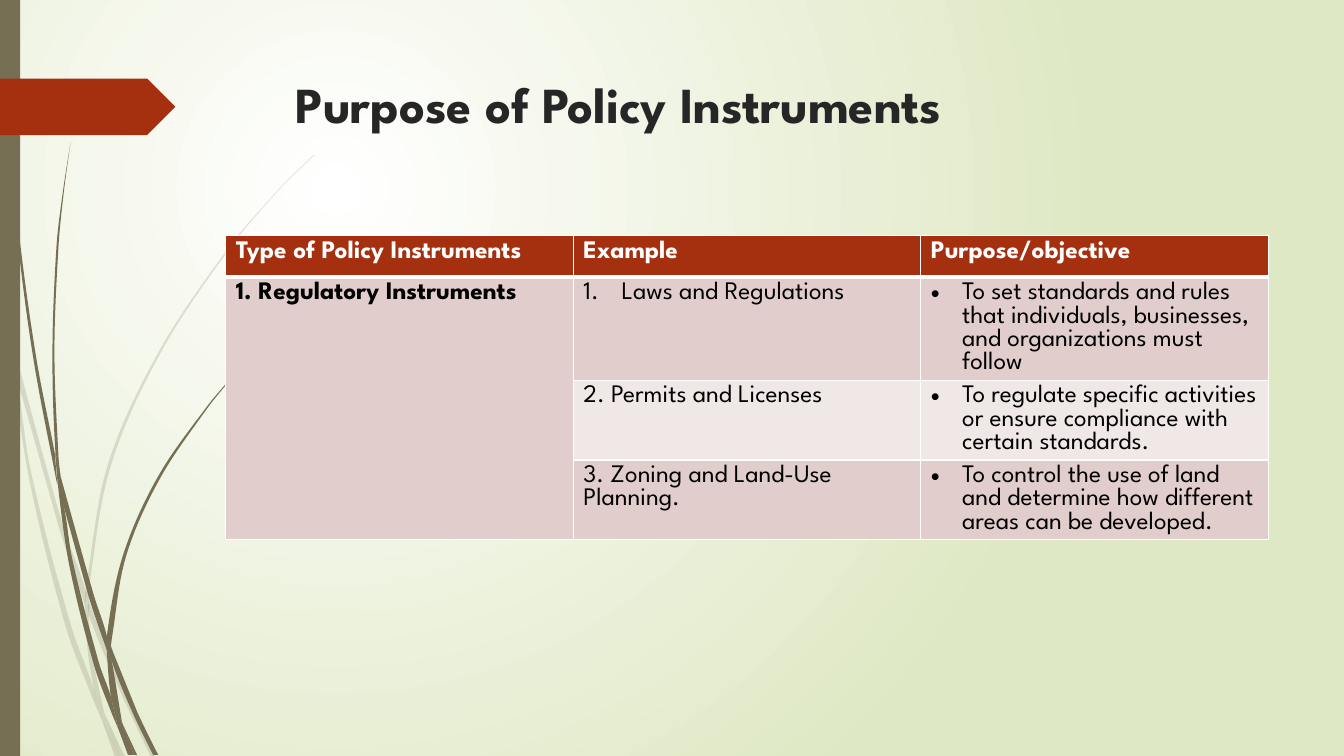
from dataclasses import dataclass
from math import hypot

from pptx import Presentation, util as u
from pptx.dml.color import RGBColor
from pptx.enum import shapes, text
from pptx.oxml import parse_xml
from pptx.oxml.ns import nsdecls, qn
from pptx.oxml.xmlchemy import OxmlElement


@dataclass(frozen=True)
class Theme:
    font: str = "League Spartan"
    bullet_font: str = "Arial"
    title_size: int = 36
    table_size: int = 18
    title: str = "262626"
    accent: str = "A53010"
    stem: str = "766F54"
    white: str = "FFFFFF"
    black: str = "000000"
    backdrop: str = "DFE8C4"
    band_dark: str = "E1CDCC"
    band_light: str = "F0E8E7"
    columns: float = 13.33
    rows: float = 7.5


PALE_BLADES = [
    [(.11, 3.5), (.09, 3.22), (0, 2.82), (0, 2.99), (.1, 3.44)],
    [(.58, 5.22), (.84, 5.99), (.85, 5.86), (.62, 5.2), (.14, 3.45), (.17, 3.76)],
    [(.92, 6.07), (.88, 5.96), (.88, 6.1), (1.23, 6.94), (1.5, 7.51), (1.55, 7.51), (1.27, 6.92)],
    [(1.19, 7.51), (1.24, 7.51), (1.05, 7.11)],
    [(.93, 6.83), (.7, 6.19), (.31, 4.69), (.17, 3.76), (.11, 3.5), (.28, 4.7), (.65, 6.21),
     (.92, 6.93), (1.01, 7.14), (.99, 7.07)],
    [(.84, 5.99), (.87, 6.46), (.93, 6.83), (.96, 6.92), (1.05, 7.11), (1.03, 7.06), (.91, 6.46),
     (.88, 6.1), (.88, 6.08)],
    [(.88, 5.84), (1.1, 4.62), (1.6, 3.49), (2.29, 2.45), (2.68, 1.98), (2.9, 1.75), (3.12, 1.54),
     (3.12, 1.53), (2.89, 1.75), (2.68, 1.97), (2.28, 2.44), (1.58, 3.48), (1.07, 4.61),
     (.85, 5.84), (.85, 5.86), (.88, 5.96)],
    [(1.01, 7.14), (1.14, 7.51), (1.19, 7.51)],
    [(.88, 6.08), (.88, 6.1), (.88, 5.96), (.85, 5.86), (.84, 5.99)],
    [(.96, 6.92), (.93, 6.83), (.99, 7.07), (1.01, 7.14), (1.19, 7.51), (1.05, 7.11)],
]
DARK_BLADES = [
    [(.07, 1.1), (.17, 2.33), (.33, 3.55), (.56, 4.77), (.57, 4.81), (.55, 4.57), (.55, 4.53),
     (.36, 3.55), (.19, 2.32), (.08, 1.09), (.05, .48), (.04, 0), (.03, 0), (.04, .48)],
    [(.88, 5.92), (1.06, 6.45), (1.06, 6.31), (.93, 5.9), (.6, 4.72), (.64, 5.05)],
    [(1.13, 6.49), (1.1, 6.41), (1.11, 6.56), (1.32, 7.08), (1.52, 7.49), (1.57, 7.49), (1.36, 7.06)],
    [(1.1, 6.91), (.98, 6.57), (.72, 5.56), (.64, 5.05), (.57, 4.77), (.68, 5.57), (.93, 6.59),
     (1.11, 7.08), (1.17, 7.22), (1.16, 7.17)],
    [(.6, 4.72), (.58, 4.53), (.54, 3.49), (.58, 2.45), (.63, 1.93), (.7, 1.41), (.62, 1.93),
     (.56, 2.45), (.52, 3.49), (.55, 4.49)],
    [(1.33, 7.49), (1.36, 7.49), (1.22, 7.19)],
    [(.57, 4.77), (.64, 5.05), (.6, 4.72), (.55, 4.49), (.55, 4.53)],
    [(1.11, 6.33), (1.25, 5.52), (1.58, 4.76), (2.05, 4.06), (2.31, 3.74), (2.45, 3.59),
     (2.61, 3.44), (2.6, 3.44), (2.45, 3.58), (2.31, 3.73), (2.04, 4.05), (1.56, 4.74),
     (1.22, 5.51), (1.06, 6.31), (1.1, 6.41)],
    [(1.17, 7.22), (1.27, 7.49), (1.31, 7.49)],
    [(1.06, 6.45), (1.1, 6.91), (1.16, 7.06), (1.22, 7.19), (1.21, 7.16), (1.11, 6.56), (1.09, 6.51)],
    [(1.06, 6.45), (1.09, 6.51), (1.11, 6.56), (1.1, 6.41), (1.06, 6.31)],
    [(1.16, 7.06), (1.1, 6.91), (1.16, 7.17), (1.17, 7.22), (1.3, 7.49), (1.33, 7.49), (1.22, 7.19)],
]
HEADERS = ["Type of Policy Instruments", "Example", "Purpose/objective"]
CATEGORY = "1. Regulatory Instruments"
INSTRUMENTS = [
    ("Laws and Regulations",
     "To set standards and rules that individuals, businesses, and organizations must follow"),
    ("2. Permits and Licenses",
     "To regulate specific activities or ensure compliance with certain standards."),
    ("3. Zoning and Land-Use Planning.",
     "To control the use of land and determine how different areas can be developed."),
]


def add_element(parent, tag, **attributes):
    element = OxmlElement(tag)
    for name, value in attributes.items():
        element.set(name, str(value))
    parent.append(element)
    return element


def write_text(frame, content, *, font, size, color, bold=False, marker=None, indent=0):
    paragraph = frame.paragraphs[0]
    paragraph.alignment = text.PP_ALIGN.LEFT
    if marker:
        properties = paragraph._p.get_or_add_pPr()
        properties.set("marL", str(u.Inches(indent)))
        properties.set("indent", str(-u.Inches(indent)))
        if marker == "1.":
            add_element(properties, "a:buAutoNum", type="arabicPeriod")
        else:
            add_element(properties, "a:buFont", typeface=Theme.bullet_font)
            add_element(properties, "a:buChar", char=marker)
    run = paragraph.add_run()
    run.text = content
    run.font.name, run.font.size, run.font.bold = font, u.Pt(size), bold
    run.font.color.rgb = RGBColor.from_string(color)


def tangent(before, point, after):
    (ax, ay), (bx, by) = [(q[0] - p[0], q[1] - p[1]) for p, q in ((before, point), (point, after))]
    if ax * bx + ay * by < 0.7 * hypot(ax, ay) * hypot(bx, by):
        return 0, 0
    length = hypot(ax + bx, ay + by)
    return (ax + bx) / length, (ay + by) / length


class SlideBuilder:
    def __init__(self, presentation, theme):
        self.theme = theme
        self.column = presentation.slide_width / theme.columns
        self.row = presentation.slide_height / theme.rows
        self.slide = presentation.slides.add_slide(presentation.slide_layouts[5])

    def box(self, left, top, width=0, height=0):
        return (round(left * self.column), round(top * self.row),
                round(width * self.column), round(height * self.row))

    def background(self):
        fill = self.slide.background.fill
        fill.gradient()
        for position, color in enumerate((self.theme.white, self.theme.backdrop)):
            fill.gradient_stops[position].color.rgb = RGBColor.from_string(color)
            fill.gradient_stops[position].position = position
        linear = next(self.slide._element.iter(qn("a:lin")))
        linear.getparent().replace(linear, parse_xml(
            f'<a:path {nsdecls("a")} path="circle">'
            '<a:fillToRect l="50000" t="50000" r="100000" b="100000"/></a:path>'))

    def paint(self, shape, color, opacity=100):
        shape.shadow.inherit = False
        shape.fill.solid()
        shape.fill.fore_color.rgb = RGBColor.from_string(color)
        shape.line.fill.background()
        if opacity < 100:
            add_element(next(shape._element.spPr.iter(qn("a:srgbClr"))), "a:alpha", val=opacity * 1000)

    def blade(self, points, opacity=100):
        outline = [self.box(*point)[:2] for point in points]
        builder = self.slide.shapes.build_freeform(*outline[0])
        builder.add_line_segments(outline[1:], close=True)
        shape = builder.convert_to_shape()
        count = len(outline)
        slopes = [tangent(outline[i - 1], outline[i], outline[(i + 1) % count]) for i in range(count)]
        for i, line in enumerate(list(shape._element.iter(qn("a:lnTo")))):
            j = (i + 1) % count
            start, end = outline[i], outline[j]
            reach = hypot(end[0] - start[0], end[1] - start[1]) / 3
            curve = OxmlElement("a:cubicBezTo")
            for anchor, slope, sign in ((start, slopes[i], 1), (end, slopes[j], -1), (end, (0, 0), 0)):
                add_element(curve, "a:pt", x=round(anchor[0] + sign * reach * slope[0] - shape.left),
                            y=round(anchor[1] + sign * reach * slope[1] - shape.top))
            line.getparent().replace(line, curve)
        self.paint(shape, self.theme.stem, opacity)

    def block(self, kind, place, color):
        self.paint(self.slide.shapes.add_shape(kind, *self.box(*place)), color)

    def title(self, content, place):
        shape = self.slide.shapes.title
        shape.left, shape.top, shape.width, shape.height = self.box(*place)
        frame = shape.text_frame
        frame.word_wrap, frame.auto_size = True, text.MSO_AUTO_SIZE.NONE
        frame.vertical_anchor = text.MSO_ANCHOR.TOP
        write_text(frame, content, font=self.theme.font, size=self.theme.title_size,
                   color=self.theme.title, bold=True)

    def style_cell(self, cell, fill, top, bottom):
        for side, points in zip("LRTB", (1, 1, top, bottom)):
            border = add_element(cell._tc.get_or_add_tcPr(), f"a:ln{side}", w=u.Pt(points))
            add_element(add_element(border, "a:solidFill"), "a:srgbClr", val=self.theme.white)
        cell.fill.solid()
        cell.fill.fore_color.rgb = RGBColor.from_string(fill)

    def table(self, left, top, width, heights):
        theme = self.theme
        place = self.box(left, top, width, sum(heights))
        table = self.slide.shapes.add_table(len(heights), len(HEADERS), *place).table
        table.horz_banding = False
        for row, height in zip(table.rows, heights):
            row.height = round(height * self.row)
        for index, fill in enumerate((theme.accent, theme.band_dark, theme.band_light, theme.band_dark)):
            for column in range(len(HEADERS)):
                self.style_cell(table.cell(index, column),
                                theme.band_dark if index and not column else fill,
                                top=3 if index == 1 else 1, bottom=1 if index else 3)
        table.cell(1, 0).merge(table.cell(len(INSTRUMENTS), 0))

        def write_cell(row, column, content, color=theme.black, **style):
            write_text(table.cell(row, column).text_frame, content,
                       font=theme.font, size=theme.table_size, color=color, **style)

        for column, header in enumerate(HEADERS):
            write_cell(0, column, header, theme.white, bold=True)
        write_cell(1, 0, CATEGORY, bold=True)
        for row, (example, purpose) in enumerate(INSTRUMENTS, 1):
            write_cell(row, 1, example, marker="1." if row == 1 else None, indent=0.38)
            write_cell(row, 2, purpose, marker="•", indent=0.31)


def main():
    presentation = Presentation()
    presentation.slide_width, presentation.slide_height = u.Inches(13.33), u.Inches(7.5)
    builder = SlideBuilder(presentation, Theme())
    builder.background()
    for blades, opacity in ((PALE_BLADES, 20), (DARK_BLADES, 100)):
        for points in blades:
            builder.blade(points, opacity)
    builder.block(shapes.MSO_SHAPE.RECTANGLE, (0, 0, 0.2, 7.5), Theme.stem)
    builder.block(shapes.MSO_SHAPE.PENTAGON, (0, 0.78, 1.74, 0.56), Theme.accent)
    builder.title("Purpose of Policy Instruments", (2.83, 0.68, 9.75, 1.4))
    builder.table(left=2.24, top=2.34, width=10.34, heights=[0.41, 1.02, 0.79, 0.79])
    presentation.save("out.pptx")


if __name__ == "__main__":
    main()
